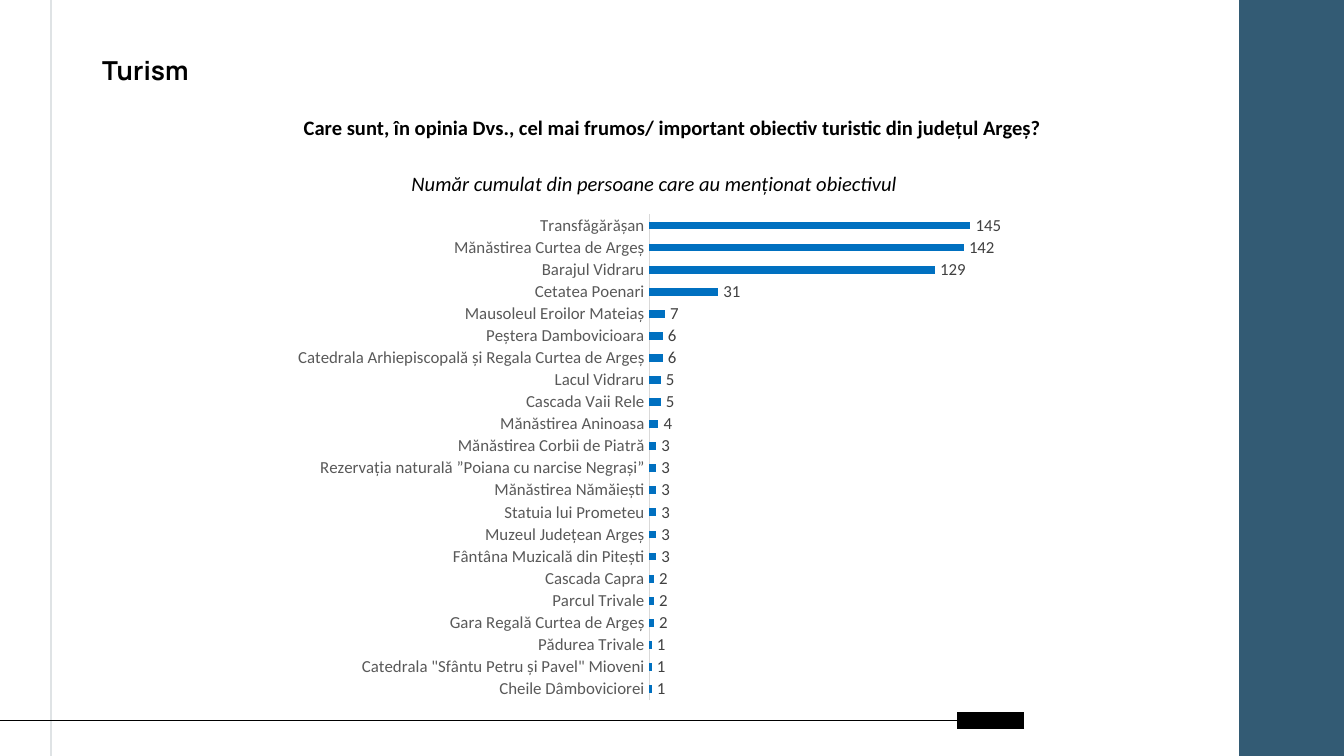
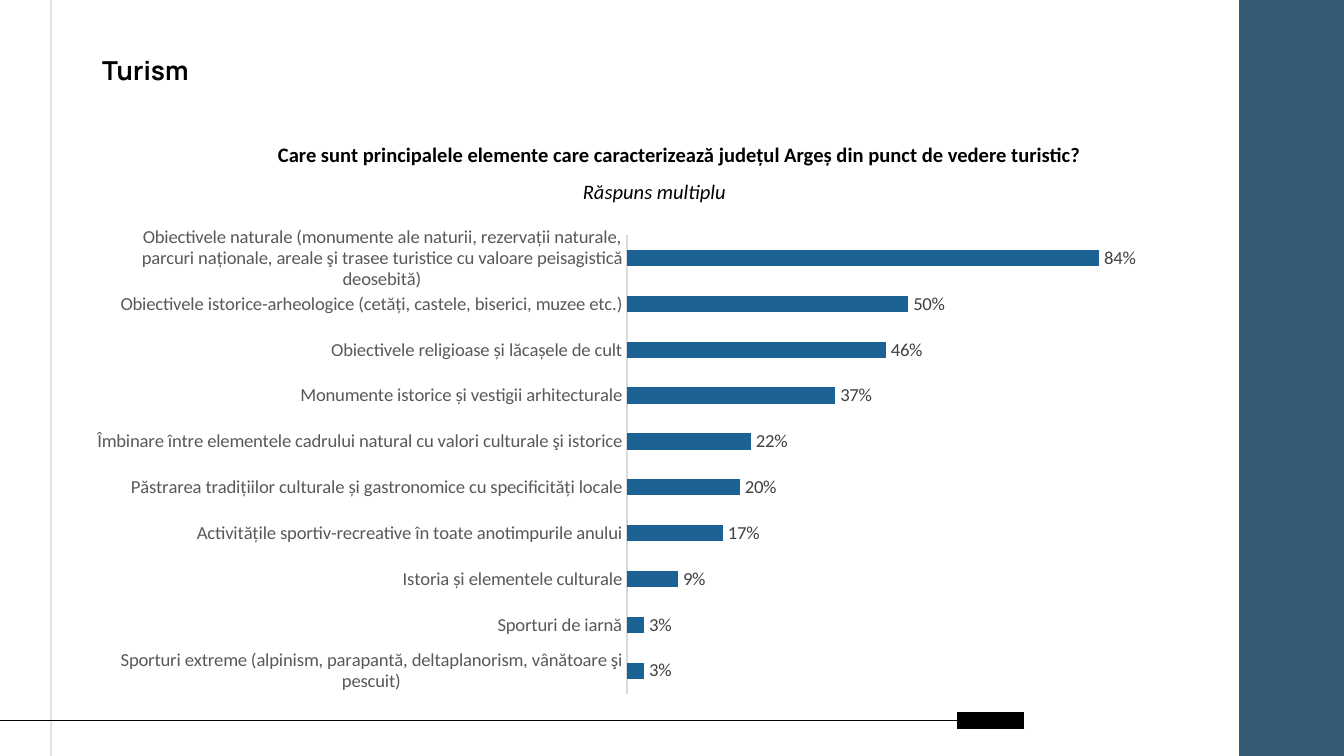
import pptx
import pptx.util
import pptx.chart.data
import pptx.dml.color
import pptx.enum.chart
import pptx.enum.shapes
import pptx.enum.text
import pptx.oxml
import pptx.oxml.ns
import lxml.etree

Pt = pptx.util.Pt
HUES = {
    "band": "335B74", "rule": "DFE3E5", "ink": "000000", "axis": "D9D9D9",
    "cat": "595959", "label": "404040", "blue": "0070C0", "navy": "1D6294",
}

deck = pptx.Presentation()
deck.slide_width = pptx.util.Inches(10)
deck.slide_height = deck.slide_width * 9 // 16


def place(*parts):
    sides = (deck.slide_width, deck.slide_height) * 2
    return [int(side * part / 100) for side, part in zip(sides, parts)]


def style(font, face, size, hue, bold=False, slant=False):
    font.name, font.size, font.bold, font.italic = face, Pt(size), bold, slant
    font.color.rgb = pptx.dml.color.RGBColor.from_string(HUES[hue])


LINES = [
    ((3.8, -0.7, 3.8, 100.6), "rule", 0.75),
    ((76.2, 95.29, 71.2, 95.29), "ink", 9),
    ((71.2, 95.29, -0.9, 95.29), "ink", 0.75),
]

PAGES = [
    {
        "texts": [
            ("Care sunt, în opinia Dvs., cel mai frumos/ important obiectiv turistic din județul Argeș?",
             (18.5, 14.4, 63.1, 5), True),
            ("Număr cumulat din persoane care au menționat obiectivul",
             (19.9, 21.69, 57.6, 5.16), False),
        ],
        "chart": (13.1, 27.91, 61.7, 65.96),
        "plot": (0.571, 0.007, 0.427, 0.974),
        "top": 160, "form": "General", "size": 9, "hue": "blue",
        "rows": [
            ("Transfăgărășan", 145),
            ("Mănăstirea Curtea de Argeș", 142),
            ("Barajul Vidraru", 129),
            ("Cetatea Poenari", 31),
            ("Mausoleul Eroilor Mateiaș", 7),
            ("Peștera Dambovicioara", 6),
            ("Catedrala Arhiepiscopală și Regala Curtea de Argeș", 6),
            ("Lacul Vidraru", 5),
            ("Cascada Vaii Rele", 5),
            ("Mănăstirea Aninoasa", 4),
            ("Mănăstirea Corbii de Piatră", 3),
            ("Rezervația naturală ”Poiana cu narcise Negrași”", 3),
            ("Mănăstirea Nămăiești", 3),
            ("Statuia lui Prometeu", 3),
            ("Muzeul Județean Argeș", 3),
            ("Fântâna Muzicală din Pitești", 3),
            ("Cascada Capra", 2),
            ("Parcul Trivale", 2),
            ("Gara Regală Curtea de Argeș", 2),
            ("Pădurea Trivale", 1),
            ('Catedrala "Sfântu Petru și Pavel" Mioveni', 1),
            ("Cheile Dâmboviciorei", 1),
        ],
    },
    {
        "texts": [
            ("Care sunt principalele elemente care caracterizează județul Argeș din punct de vedere turistic? ",
             (19.1, 17.96, 63.3, 5.16), True),
            ("Răspuns multiplu", (19.9, 22.76, 57.6, 5.16), False),
        ],
        "chart": (7.2, 30.04, 80.8, 63.29),
        "plot": (0.488, 0.001, 0.466, 0.974),
        "top": 0.9, "form": "0%", "size": 10, "hue": "navy",
        "rows": [
            ("Obiectivele naturale (monumente ale naturii, rezervații naturale, parcuri naționale, "
             "areale şi trasee turistice cu valoare peisagistică deosebită)", 0.84),
            ("Obiectivele istorice-arheologice (cetăți, castele, biserici, muzee etc.)", 0.5),
            ("Obiectivele religioase și lăcașele de cult", 0.46),
            ("Monumente istorice și vestigii arhitecturale", 0.37),
            ("Îmbinare între elementele cadrului natural cu valori culturale şi istorice", 0.22),
            ("Păstrarea tradițiilor culturale și gastronomice cu specificități locale", 0.2),
            ("Activitățile sportiv-recreative în toate anotimpurile anului", 0.17),
            ("Istoria și elementele culturale", 0.09),
            ("Sporturi de iarnă", 0.03),
            ("Sporturi extreme (alpinism, parapantă, deltaplanorism, vânătoare şi pescuit)", 0.03),
        ],
    },
]

for page in PAGES:
    slide = deck.slides.add_slide(deck.slide_layouts[5])
    shapes = slide.shapes

    title = shapes.title
    title.left, title.top, title.width, title.height = place(6.6, 5.69, 84.3, 7.11)
    frame = title.text_frame
    frame.text = "Turism"
    frame.auto_size = pptx.enum.text.MSO_AUTO_SIZE.NONE
    frame.vertical_anchor = pptx.enum.text.MSO_ANCHOR.MIDDLE
    frame.margin_left = frame.margin_right = pptx.util.Inches(0.1)
    frame.margin_top = frame.margin_bottom = pptx.util.Inches(0.1)
    frame.paragraphs[0].alignment = pptx.enum.text.PP_ALIGN.LEFT
    style(frame.paragraphs[0].font, "Manrope", 14, "ink", bold=True)

    band = shapes.add_shape(pptx.enum.shapes.MSO_SHAPE.RECTANGLE, *place(92.2, 0, 7.8, 100))
    band.shadow.inherit = False
    band.fill.solid()
    band.fill.fore_color.rgb = pptx.dml.color.RGBColor.from_string(HUES["band"])
    band.line.fill.background()

    for ends, hue, width in LINES:
        line = shapes.add_connector(pptx.enum.shapes.MSO_CONNECTOR.STRAIGHT, *place(*ends))
        line.line.color.rgb = pptx.dml.color.RGBColor.from_string(HUES[hue])
        line.line.width = Pt(width)
        lxml.etree.SubElement(line._element.spPr, pptx.oxml.ns.qn("a:effectLst"))

    for words, area, bold in page["texts"]:
        frame = shapes.add_textbox(*place(*area)).text_frame
        frame.word_wrap = True
        frame.auto_size = pptx.enum.text.MSO_AUTO_SIZE.SHAPE_TO_FIT_TEXT
        frame.text = words
        frame.paragraphs[0].alignment = pptx.enum.text.PP_ALIGN.CENTER
        style(frame.paragraphs[0].font, "Calibri", 11, "ink", bold, not bold)

    names, values = zip(*page["rows"])
    data = pptx.chart.data.CategoryChartData(number_format=page["form"])
    data.categories = names
    data.add_series("Series 1", values)
    chart = shapes.add_chart(
        pptx.enum.chart.XL_CHART_TYPE.BAR_CLUSTERED, *place(*page["chart"]), data).chart
    chart.has_legend = chart.has_title = False
    style(chart.font, "Arial", 10, "ink")

    cats = chart.category_axis
    cats.reverse_order = True
    cats.has_major_gridlines = False
    cats.major_tick_mark = cats.minor_tick_mark = pptx.enum.chart.XL_TICK_MARK.NONE
    cats.format.line.color.rgb = pptx.dml.color.RGBColor.from_string(HUES["axis"])
    cats.format.line.width = Pt(0.75)
    style(cats.tick_labels.font, "Calibri", page["size"], "cat")

    scale = chart.value_axis
    scale.minimum_scale, scale.maximum_scale = 0, page["top"]
    scale.has_major_gridlines = False
    scale.visible = False

    plot = chart.plots[0]
    plot.gap_width = 182
    plot.vary_by_categories = False
    bars = plot.series[0]
    bars.format.fill.solid()
    bars.format.fill.fore_color.rgb = pptx.dml.color.RGBColor.from_string(HUES[page["hue"]])
    labels = bars.data_labels
    labels.show_value = True
    labels.position = pptx.enum.chart.XL_LABEL_POSITION.OUTSIDE_END
    labels.number_format = page["form"]
    labels.number_format_is_linked = False
    style(labels.font, "Calibri", page["size"], "label")

    field = chart._chartSpace.chart.plotArea
    for old in field.findall(pptx.oxml.ns.qn("c:layout")):
        field.remove(old)
    tags = [("layoutTarget", "inner"), ("xMode", "edge"), ("yMode", "edge")]
    tags += zip("xywh", page["plot"])
    inner = "".join(f'<c:{tag} val="{val}"/>' for tag, val in tags)
    field.insert(0, pptx.oxml.parse_xml(
        f'<c:layout {pptx.oxml.ns.nsdecls("c")}><c:manualLayout>{inner}</c:manualLayout></c:layout>'))

deck.save("out.pptx")
